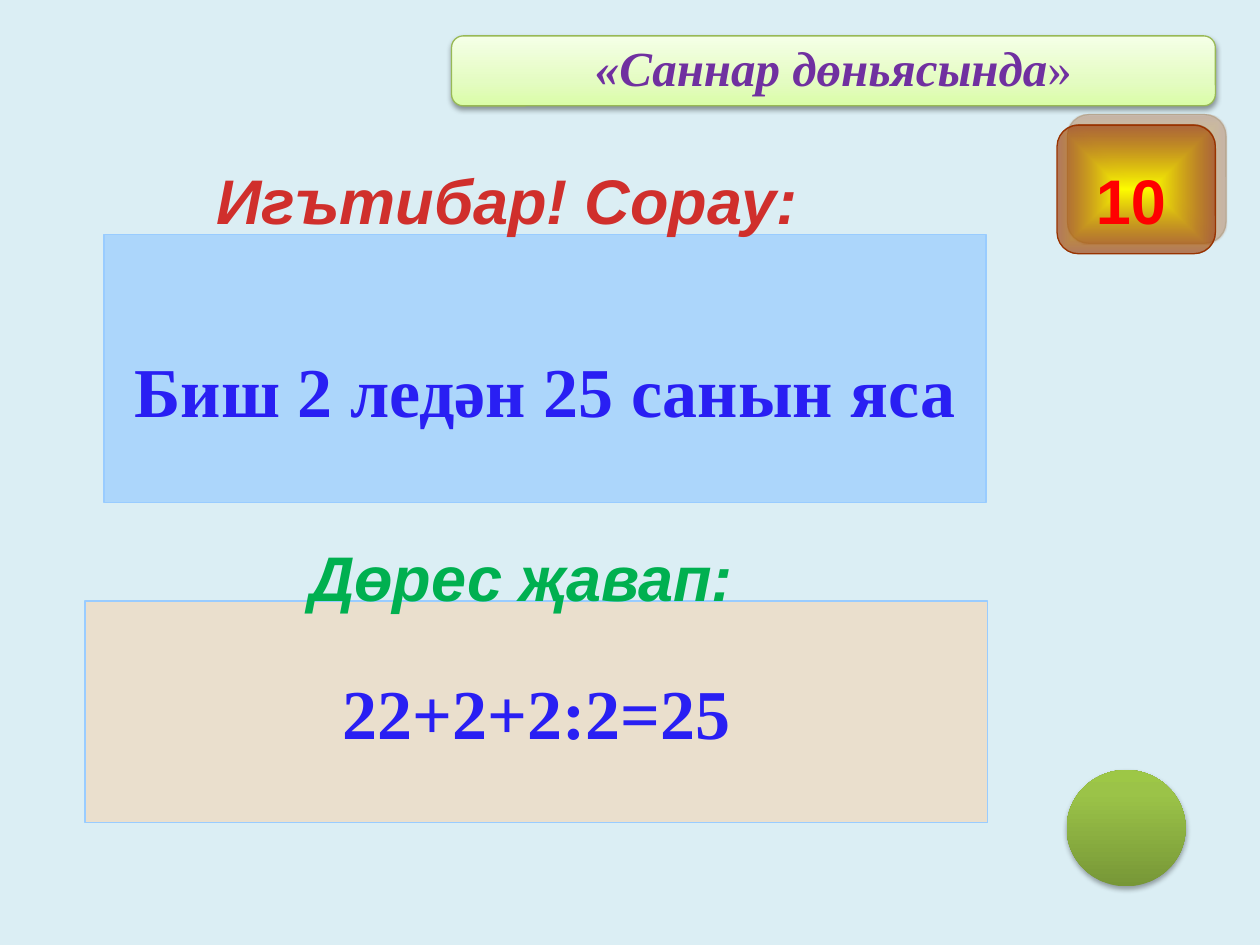
import pptx
import pptx.util
import pptx.dml.color
import pptx.enum.shapes
import pptx.enum.text
import pptx.oxml
import pptx.oxml.ns

Pt = pptx.util.Pt
SHAPE = pptx.enum.shapes.MSO_SHAPE
ANCHOR = pptx.enum.text.MSO_ANCHOR
NAMESPACE = pptx.oxml.ns.nsdecls("a")

BACKGROUND = "DBEEF4"
HEADINGS = {
    "question": ("Игътибар! Сорау:", (74.5, 88.5, 430.5, 40.5), "D02F2C"),
    "answer": ("Дөрес җавап:", (99.5, 304, 396.5, 29), "00B050"),
    "points": ("10", (626.5, 88.5, 39.5, 39.5), "FF0000"),
}
PANELS = {
    "question": ("Биш 2 ледән 25 санын яса", (59.5, 134, 504, 153), "99CCFF", 70, 1.5),
    "answer": ("22+2+2:2=25", (48.5, 343.5, 516, 126.5), "FFCC99", 42, 1),
}
ORNAMENTS = {
    "button": dict(kind=SHAPE.OVAL, place=(609.5, 440, 68, 66.5), line=None,
                   stops=[(0, "779737", 100), (80, "9BC348", 100), (100, "9DC746", 100)],
                   radial=False, shadow=("000000", 35, 3.1, 1.8, 90)),
    "badge": dict(kind=SHAPE.ROUNDED_RECTANGLE, place=(604, 71.5, 90.5, 73.5), line="993300",
                  stops=[(0, "FFFF00", 100), (100, "993300", 62)],
                  radial=True, shadow=("996633", 50, 0, 8.5, 315)),
    "banner": dict(kind=SHAPE.ROUNDED_RECTANGLE, place=(258, 20.5, 436.5, 40), line="98B955",
                   stops=[(0, "DAFDA7", 100), (35, "E4FCC2", 100), (100, "F5FFE7", 100)],
                   radial=False, shadow=("000000", 38, 3.1, 1.6, 90)),
}
BANNER_TEXT = ("«Саннар дөньясында", "»")


def color(value):
    return pptx.dml.color.RGBColor.from_string(value)


def color_xml(value, opacity):
    return f'<a:srgbClr val="{value}"><a:alpha val="{opacity * 1000}"/></a:srgbClr>'


def replace_fill(box, xml):
    box.fill.solid()
    properties = box._element.spPr
    solid = properties.find(pptx.oxml.ns.qn("a:solidFill"))
    properties.replace(solid, pptx.oxml.parse_xml(xml))


def place_box(box, place):
    box.left, box.top, box.width, box.height = map(Pt, place)


def set_line(box, value):
    if value is None:
        box.line.fill.background()
    else:
        box.line.color.rgb = color(value)
        box.line.width = Pt(0.75)


def write(box, texts, font, size, value, italic=False, anchor=ANCHOR.MIDDLE, wrap=True):
    frame = box.text_frame
    frame.auto_size = pptx.enum.text.MSO_AUTO_SIZE.NONE
    frame.word_wrap = wrap
    frame.vertical_anchor = anchor
    para = frame.paragraphs[0]
    para.alignment = pptx.enum.text.PP_ALIGN.CENTER
    para.font.name, para.font.size = font, Pt(size)
    para.font.bold, para.font.italic = True, italic
    para.font.color.rgb = color(value)
    for text in texts:
        para.add_run().text = text
    return para


def add_ornament(page, kind, place, line, stops, radial, shadow):
    box = page.shapes.add_shape(kind, *map(Pt, place))
    stop_xml = "".join(f'<a:gs pos="{position * 1000}">{color_xml(value, opacity)}</a:gs>'
                       for position, value, opacity in stops)
    direction = ('<a:path path="shape"><a:fillToRect l="50000" t="50000" r="50000" b="50000"/></a:path>'
                 if radial else '<a:lin ang="16200000" scaled="0"/>')
    replace_fill(box, f'<a:gradFill {NAMESPACE} rotWithShape="1"><a:gsLst>{stop_xml}</a:gsLst>'
                      f'{direction}</a:gradFill>')
    set_line(box, line)
    box.shadow.inherit = False
    value, opacity, blur, distance, angle = shadow
    effects = box._element.spPr.find(pptx.oxml.ns.qn("a:effectLst"))
    effects.append(pptx.oxml.parse_xml(
        f'<a:outerShdw {NAMESPACE} blurRad="{Pt(blur)}" dist="{Pt(distance)}" '
        f'dir="{angle * 60000}" rotWithShape="0">{color_xml(value, opacity)}</a:outerShdw>'))
    return box


def fill_panel(box, text, place, value, opacity, spacing):
    place_box(box, place)
    replace_fill(box, f'<a:solidFill {NAMESPACE}>{color_xml(value, opacity)}</a:solidFill>')
    set_line(box, "99CCFF")
    para = write(box, [text], "Times New Roman", 40, "291FF3")
    para.line_spacing = spacing
    para.space_before = Pt(8)


def fill_heading(box, text, place, value, italic=True):
    place_box(box, place)
    write(box, [text], "Arial", 36, value, italic, ANCHOR.TOP, wrap=False)


def add_text_box(page):
    return page.shapes.add_textbox(0, 0, 0, 0)


def main():
    deck = pptx.Presentation()
    deck.slide_width, deck.slide_height = Pt(720), Pt(540)
    page = deck.slides.add_slide(deck.slide_layouts[0])
    page.background.fill.solid()
    page.background.fill.fore_color.rgb = color(BACKGROUND)

    fill_panel(page.placeholders[1], *PANELS["question"])
    answer = page.shapes.add_shape(SHAPE.RECTANGLE, 0, 0, 0, 0)
    answer.shadow.inherit = False
    fill_panel(answer, *PANELS["answer"])
    title = page.shapes.title
    page.shapes._spTree.append(title._element)
    fill_heading(title, *HEADINGS["question"])
    fill_heading(add_text_box(page), *HEADINGS["answer"])

    add_ornament(page, **ORNAMENTS["button"])
    add_ornament(page, **ORNAMENTS["badge"])
    fill_heading(add_text_box(page), *HEADINGS["points"], italic=False)

    banner = add_ornament(page, **ORNAMENTS["banner"])
    para = write(banner, BANNER_TEXT, "Times New Roman", 28, "7030A0", italic=True, wrap=False)
    closing = para.runs[-1].font
    closing.bold = closing.italic = False
    banner.text_frame.margin_top, banner.text_frame.margin_bottom = Pt(0), Pt(4)

    deck.save("out.pptx")


if __name__ == "__main__":
    main()
